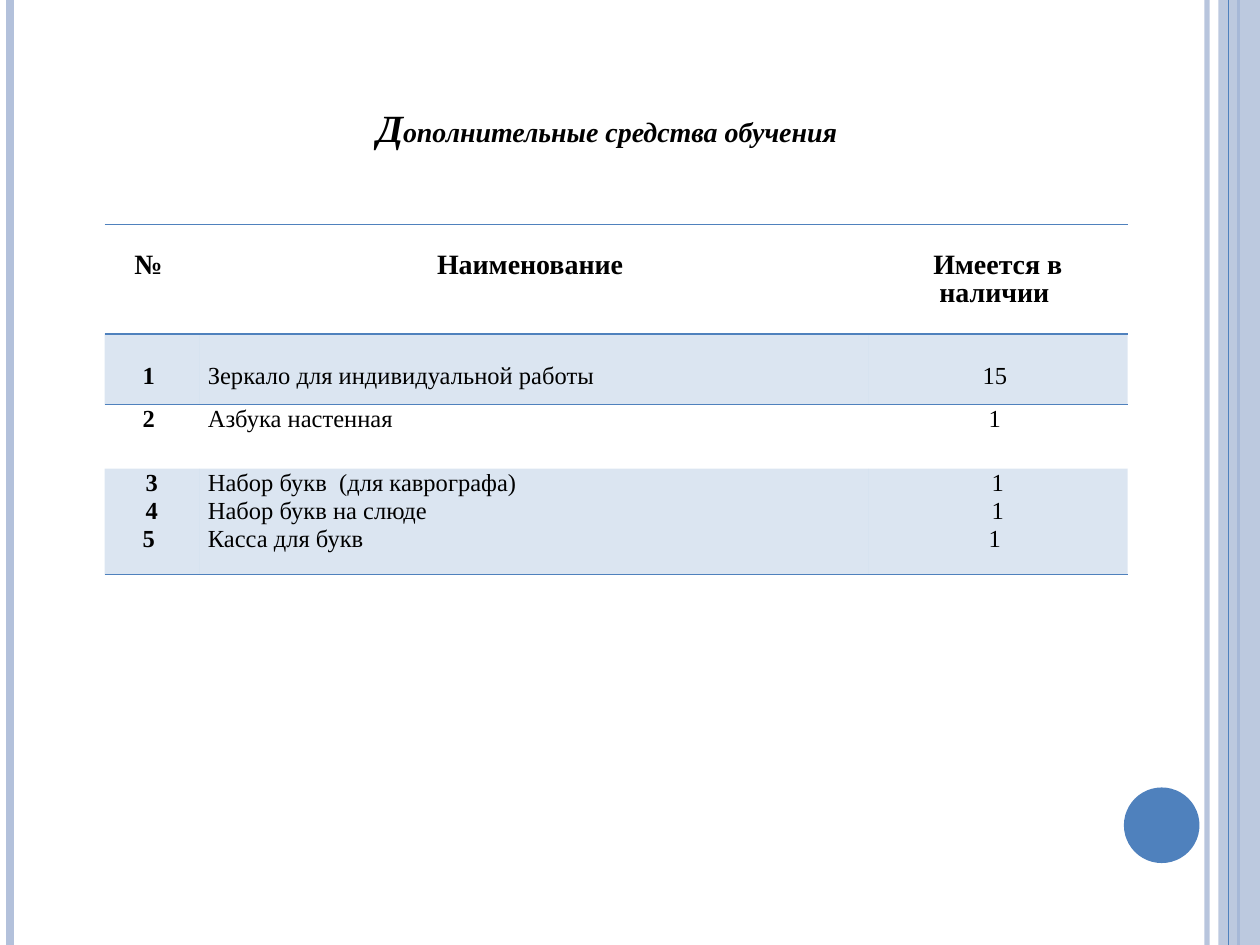
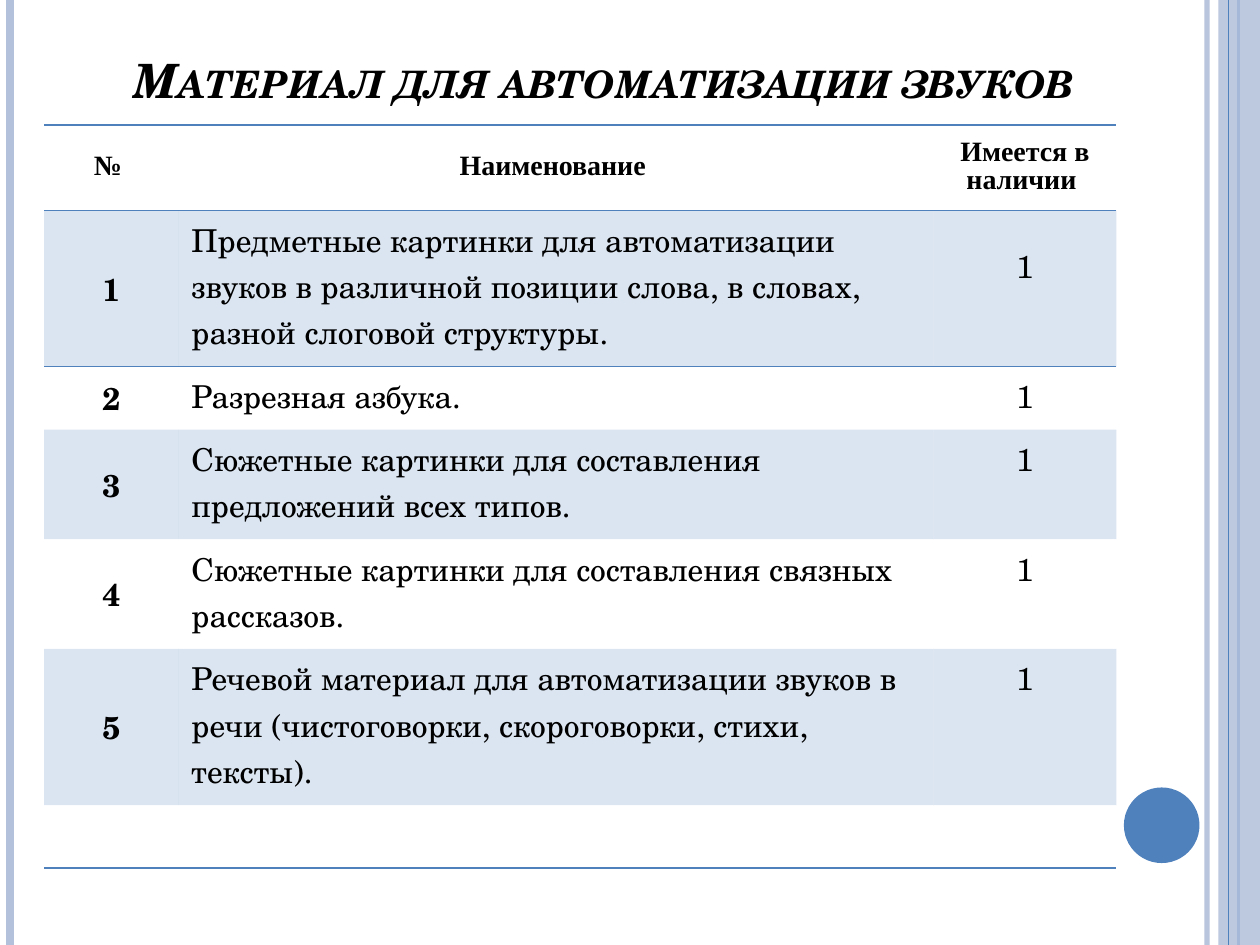
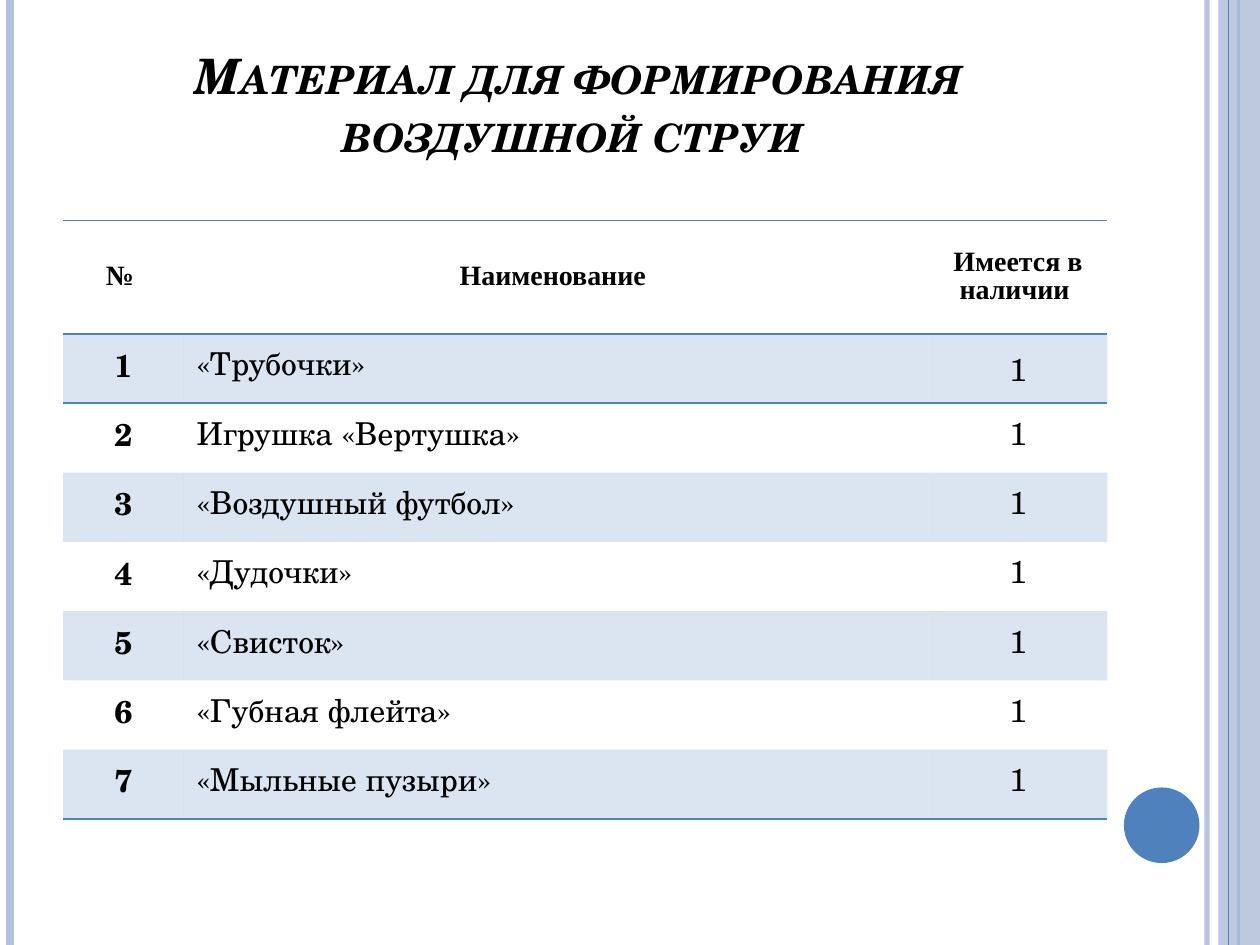
"""Builds three slides listing teaching materials in ruled, banded tables."""
from lxml import etree
from pptx import Presentation
from pptx.dml.color import RGBColor
from pptx.enum.shapes import MSO_CONNECTOR, MSO_SHAPE
from pptx.enum.text import MSO_ANCHOR, PP_ALIGN
from pptx.oxml.ns import qn
from pptx.util import Inches, Pt

LEFT, CENTER = PP_ALIGN.LEFT, PP_ALIGN.CENTER
TOP, MIDDLE, BOTTOM = MSO_ANCHOR.TOP, MSO_ANCHOR.MIDDLE, MSO_ANCHOR.BOTTOM
STRAIGHT = MSO_CONNECTOR.STRAIGHT
RECT, OVAL = MSO_SHAPE.RECTANGLE, MSO_SHAPE.OVAL

BLUE = RGBColor(0x4F, 0x81, 0xBD)
PALE = RGBColor(0xB3, 0xC1, 0xDB)
BLACK = RGBColor(0, 0, 0)
SERIF, SCHOOL = "Times New Roman", "TeX Gyre Schola"
PLAIN_STYLE = "{2D5ABB26-0587-4C30-8999-92F81FD0307C}"
LINE = 16.1
BLANK_LINE = 0.22
BAND_ALPHA = 20

HEADER = ("№ ", "Наименование ", "Имеется в наличии ")
EDGE_LINES = [(9.58, PALE, 3, 93), (0.08, PALE, 4.5, 100), (9.83, BLUE, 1.5, 100)]
INNER_LINE = (9.75, BLUE, 0.75, 100)

SLIDES = [
    dict(
        title=[("Д", 22), ("ополнительные средства обучения ", 16)],
        title_box=(1.3, 0.77, 7.09, 0.47), title_font=SERIF, small_caps=False,
        title_anchor=MIDDLE, title_bottom=0.05,
        at=(0.83, 1.78), cols=(0.75, 5.31, 2.06), heights=(0.87, 0.56, 0.51, 0.84),
        head=dict(anchor=TOP, top=BLANK_LINE),
        body=dict(font=SERIF, size=14, spacing=LINE, side=0.07, top=0, bottom=0),
        number_anchor=TOP,
        special={(1, c): dict(top=BLANK_LINE) for c in range(3)},
        rows=[
            ("1 ", "Зеркало для индивидуальной работы", "15 "),
            ("2 ", "Азбука настенная ", "1 "),
            ("3\n4\n5 ",
             "Набор букв  (для каврографа)\nНабор букв на слюде\nКасса для букв",
             "1\n1\n1 "),
        ],
    ),
    dict(
        title=[("Материал для автоматизации звуков ", 27)],
        title_box=(0.75, 0.36, 8.17, 0.93), title_font=SCHOOL, small_caps=True,
        title_anchor=BOTTOM, title_bottom=0.43,
        at=(0.35, 0.99), cols=(1.07, 5.99, 1.45),
        heights=(0.68, 1.24, 0.5, 0.87, 0.87, 1.24, 0.5),
        head=dict(anchor=MIDDLE), body=dict(font=SCHOOL, size=18),
        number_anchor=MIDDLE,
        special={(1, 2): dict(anchor=MIDDLE, bottom=0.41)},
        rows=[
            ("1", "Предметные картинки для автоматизации звуков в различной "
                  "позиции слова, в словах, разной слоговой структуры.", "1"),
            ("2", "Разрезная азбука.", "1"),
            ("3", "Сюжетные картинки для составления предложений всех типов.", "1"),
            ("4", "Сюжетные картинки для составления связных рассказов.", "1"),
            ("5", "Речевой материал для автоматизации звуков в речи "
                  "(чистоговорки, скороговорки, стихи, тексты).", "1"),
            ("", "", ""),
        ],
    ),
    dict(
        title=[("Материал для формирования воздушной струи ", 27.9)],
        title_box=(0.51, 0.84, 8.17, 0.93), title_font=SCHOOL, small_caps=True,
        title_anchor=BOTTOM, title_bottom=0.48,
        at=(0.5, 1.75), cols=(0.96, 5.91, 1.42), heights=(0.9,) + (0.55,) * 7,
        head=dict(anchor=MIDDLE), body=dict(font=SCHOOL, size=18),
        number_anchor=TOP,
        special={(1, 2): dict(anchor=MIDDLE)},
        rows=[(str(n), name, "1") for n, name in enumerate((
            "«Трубочки»", "Игрушка «Вертушка»", "«Воздушный футбол»", "«Дудочки»",
            "«Свисток»", "«Губная флейта»", "«Мыльные пузыри»"), 1)],
    ),
]


def write(p, text, size=18, font=SERIF, bold=False, italic=False, small_caps=False):
    r = p.add_run()
    r.text = text
    f = r.font
    f.size, f.name, f.bold, f.italic = Pt(size), font, bold, italic
    f.color.rgb = BLACK
    if small_caps:
        r._r.get_or_add_rPr().set("cap", "small")


def set_alpha(element, percent):
    if percent < 100:
        color = next(element.iter(qn("a:srgbClr")))
        etree.SubElement(color, qn("a:alpha")).set("val", str(percent * 1000))


def add_edge_line(s, x, color, width, alpha):
    line = s.shapes.add_connector(STRAIGHT, Inches(x), 0, Inches(x), Inches(7.5))
    line.line.color.rgb = color
    line.line.width = Pt(width)
    set_alpha(line.line._ln, alpha)
    etree.SubElement(line._element.spPr, qn("a:effectLst"))


def add_filled(s, kind, box, color, alpha=100):
    sp = s.shapes.add_shape(kind, *map(Inches, box))
    sp.shadow.inherit = False
    sp.fill.solid()
    sp.fill.fore_color.rgb = color
    sp.line.fill.background()
    set_alpha(sp._element.spPr, alpha)


def add_frame(s):
    for edge in EDGE_LINES:
        add_edge_line(s, *edge)
    add_filled(s, RECT, (9.67, 0, 0.33, 7.5), PALE, 87)
    add_edge_line(s, *INNER_LINE)
    add_filled(s, OVAL, (8.92, 6.25, 0.6, 0.6), BLUE)


def add_title(s, data):
    tf = s.shapes.add_textbox(*map(Inches, data["title_box"])).text_frame
    tf.word_wrap = True
    tf.vertical_anchor = data["title_anchor"]
    tf.margin_bottom = Inches(data["title_bottom"])
    p = tf.paragraphs[0]
    p.alignment = CENTER
    for text, size in data["title"]:
        write(p, text, size=size, font=data["title_font"], bold=True, italic=True,
              small_caps=data["small_caps"])


def add_border(cell, side):
    ln = etree.Element(qn(f"a:{side}"), w=str(Pt(1)))
    fill = etree.SubElement(ln, qn("a:solidFill"))
    etree.SubElement(fill, qn("a:srgbClr")).set("val", str(BLUE))
    return ln


def format_cell(cell, text, banded, sides, align=CENTER, anchor=TOP, side=0.1,
                top=0.05, bottom=0.05, spacing=None, **font):
    cell.vertical_anchor = anchor
    cell.margin_left = cell.margin_right = Inches(side)
    cell.margin_top, cell.margin_bottom = Inches(top), Inches(bottom)
    tf = cell.text_frame
    for i, line in enumerate(text.split("\n") if text else []):
        p = tf.add_paragraph() if i else tf.paragraphs[0]
        p.alignment = align
        if spacing:
            p.line_spacing = Pt(spacing)
        write(p, line, **font)
    tc_pr = cell._tc.get_or_add_tcPr()
    if banded:
        cell.fill.solid()
        cell.fill.fore_color.rgb = BLUE
        set_alpha(tc_pr, BAND_ALPHA)
    else:
        cell.fill.background()
    for i, name in enumerate(sides):
        tc_pr.insert(i, add_border(cell, name))


def add_list_table(s, data):
    cols, heights = data["cols"], data["heights"]
    box = (*data["at"], sum(cols), sum(heights))
    table = s.shapes.add_table(len(heights), len(cols), *map(Inches, box)).table
    table.first_row = table.horz_banding = False
    table._tbl.tblPr.find(qn("a:tableStyleId")).text = PLAIN_STYLE
    for col, width in zip(table.columns, cols):
        col.width = Inches(width)
    for row, height in zip(table.rows, heights):
        row.height = Inches(height)

    head = dict(size=16, font=SERIF, bold=True, spacing=LINE, side=0.07, top=0, bottom=0)
    last = len(heights) - 1
    for r, texts in enumerate([HEADER, *data["rows"]]):
        for c, text in enumerate(texts):
            if r == 0:
                style, sides = head | data["head"], ("lnT", "lnB")
            else:
                style = data["body"] | dict(bold=c == 0, align=LEFT if c == 1 else CENTER)
                if c == 0:
                    style["anchor"] = data["number_anchor"]
                style |= data["special"].get((r, c), {})
                sides = ("lnT",) * (r == 1) + ("lnB",) * (r == last)
            format_cell(table.cell(r, c), text, r % 2 == 1, sides, **style)


def main():
    prs = Presentation()
    prs.slide_width, prs.slide_height = Inches(10), Inches(7.5)
    for data in SLIDES:
        s = prs.slides.add_slide(prs.slide_layouts[6])
        add_frame(s)
        add_title(s, data)
        add_list_table(s, data)
    prs.save("out.pptx")


if __name__ == "__main__":
    main()
